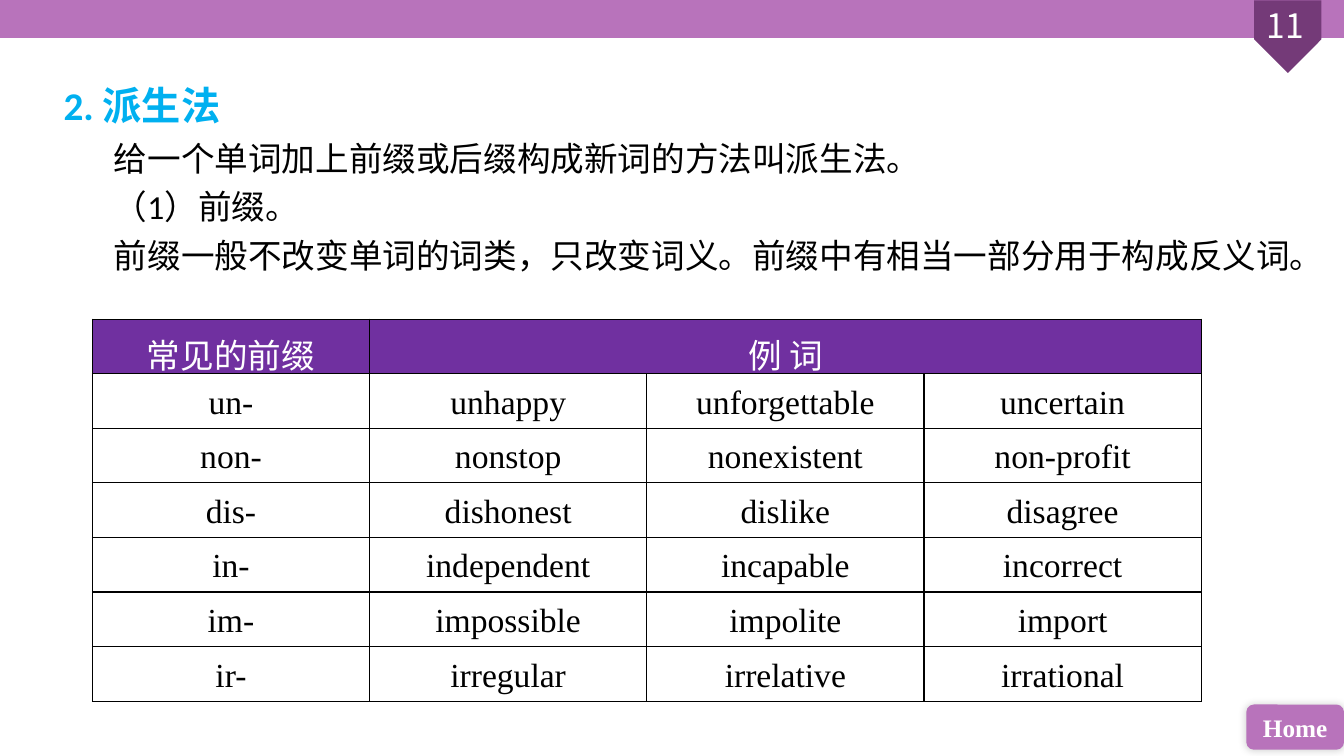
from dataclasses import dataclass

from lxml.etree import SubElement
from pptx import Presentation
from pptx.dml.color import RGBColor
from pptx.enum.shapes import MSO_SHAPE
from pptx.enum.text import MSO_ANCHOR, MSO_AUTO_SIZE, PP_ALIGN
from pptx.oxml.ns import qn
from pptx.util import Emu, Pt


@dataclass(frozen=True)
class Theme:
    bar: str = "B873BB"
    tag: str = "743A78"
    heading: str = "00B0F0"
    table_head: str = "7030A0"
    ink: str = "000000"
    white: str = "FFFFFF"
    sans: str = "Calibri"
    serif: str = "Times New Roman"
    number: str = "Noto Sans CJK SC"
    title_size: int = 28
    body_size: int = 24
    button_size: int = 18


THEME = Theme()
BODY_LINES = [
    "给一个单词加上前缀或后缀构成新词的方法叫派生法。",
    "（1）前缀。",
    "前缀一般不改变单词的词类，只改变词义。前缀中有相当一部分用于构成反义词。",
]
PREFIX_ROWS = [
    ["常见的前缀", "例 词", "", ""],
    ["un-", "unhappy", "unforgettable", "uncertain"],
    ["non-", "nonstop", "nonexistent", "non-profit"],
    ["dis-", "dishonest", "dislike", "disagree"],
    ["in-", "independent", "incapable", "incorrect"],
    ["im-", "impossible", "impolite", "import"],
    ["ir-", "irregular", "irrelative", "irrational"],
]


def px(count):
    return Emu(count * 9525)


def area(*lengths):
    return [px(length) for length in lengths]


def style_paragraph(para, font, size, color, bold=False, align=PP_ALIGN.LEFT, spacing=1.0):
    para.alignment = align
    para.line_spacing = spacing
    para.font.name = font
    para.font.size = Pt(size)
    para.font.bold = bold
    para.font.color.rgb = RGBColor.from_string(color)


def add_block(page, preset, place, color):
    block = page.shapes.add_shape(preset, *area(*place))
    block.shadow.inherit = False
    block.fill.solid()
    block.fill.fore_color.rgb = RGBColor.from_string(color)
    block.line.fill.background()
    return block


def add_glow(block):
    effects = block._element.spPr.find(qn("a:effectLst"))
    shadow = SubElement(effects, qn("a:outerShdw"), blurRad=str(Pt(6)), dist="0", dir="18900000")
    color = SubElement(shadow, qn("a:srgbClr"), val=THEME.ink)
    SubElement(color, qn("a:alpha"), val="20000")


def add_button(page, label, place):
    button = add_block(page, MSO_SHAPE.ROUNDED_RECTANGLE, place, THEME.bar)
    add_glow(button)
    frame = button.text_frame
    frame.word_wrap = False
    frame.vertical_anchor = MSO_ANCHOR.MIDDLE
    frame.text = label
    style_paragraph(frame.paragraphs[0], THEME.serif, THEME.button_size, THEME.white,
                    bold=True, align=PP_ALIGN.CENTER)


def add_page_number(page, number, place):
    frame = page.shapes.add_textbox(*area(*place)).text_frame
    frame.word_wrap = True
    frame.text = number
    style_paragraph(frame.paragraphs[0], THEME.number, THEME.body_size, THEME.white,
                    align=PP_ALIGN.CENTER)


def set_title(page, text, place):
    title = page.shapes.title
    title.left, title.top, title.width, title.height = area(*place)
    frame = title.text_frame
    frame.auto_size = MSO_AUTO_SIZE.NONE
    frame.vertical_anchor = MSO_ANCHOR.TOP
    frame.text = text
    style_paragraph(frame.paragraphs[0], THEME.sans, THEME.title_size, THEME.heading,
                    bold=True, spacing=1.2)


def add_body(page, lines, place, indent):
    frame = page.shapes.add_textbox(*area(*place)).text_frame
    frame.word_wrap = True
    frame.text = "\n".join(lines)
    for para in frame.paragraphs:
        style_paragraph(para, THEME.sans, THEME.body_size, THEME.ink, spacing=1.2)
        para._p.get_or_add_pPr().set("indent", str(px(indent)))


def add_borders(cell):
    properties = cell._tc.get_or_add_tcPr()
    for index, side in enumerate(("lnL", "lnR", "lnT", "lnB")):
        line = properties.makeelement(qn(f"a:{side}"), {"w": str(Pt(1))})
        fill = SubElement(line, qn("a:solidFill"))
        SubElement(fill, qn("a:srgbClr"), val=THEME.ink)
        properties.insert(index, line)


def style_cell(cell, text, is_head):
    cell.vertical_anchor = MSO_ANCHOR.MIDDLE
    if is_head:
        cell.fill.solid()
        cell.fill.fore_color.rgb = RGBColor.from_string(THEME.table_head)
    else:
        cell.fill.background()
    add_borders(cell)
    cell.text = text
    style_paragraph(cell.text_frame.paragraphs[0], THEME.serif, THEME.body_size,
                    THEME.white if is_head else THEME.ink,
                    align=PP_ALIGN.CENTER, spacing=1.1)


def add_prefix_table(page, rows, left, top, column_width, row_height):
    columns = len(rows[0])
    place = area(left, top, column_width * columns, row_height * len(rows))
    table = page.shapes.add_table(len(rows), columns, *place).table
    table.first_row = table.horz_banding = False
    for row_index, words in enumerate(rows):
        for column_index, word in enumerate(words):
            style_cell(table.cell(row_index, column_index), word, row_index == 0)
    table.cell(0, 1).merge(table.cell(0, columns - 1))


def main():
    deck = Presentation()
    deck.slide_width, deck.slide_height = area(1280, 720)
    page = deck.slides.add_slide(deck.slide_layouts[5])

    # Top bar with the page tag
    add_block(page, MSO_SHAPE.RECTANGLE, (0, 0, 1280, 36), THEME.bar)
    tag = add_block(page, MSO_SHAPE.PENTAGON, (1192, 3, 69, 64), THEME.tag)
    tag.rotation = 90
    add_page_number(page, "11", (1177, 0, 94, 48))

    # Home button
    add_button(page, "Home", (1187, 671, 93, 43))

    # Heading and explanation
    set_title(page, "2. 派生法", (51, 64, 1197, 60))
    add_body(page, BODY_LINES, (51, 119, 1197, 150), indent=48)

    # Prefixes with example words
    add_prefix_table(page, PREFIX_ROWS, left=88, top=304, column_width=264, row_height=52)

    deck.save("out.pptx")


if __name__ == "__main__":
    main()
